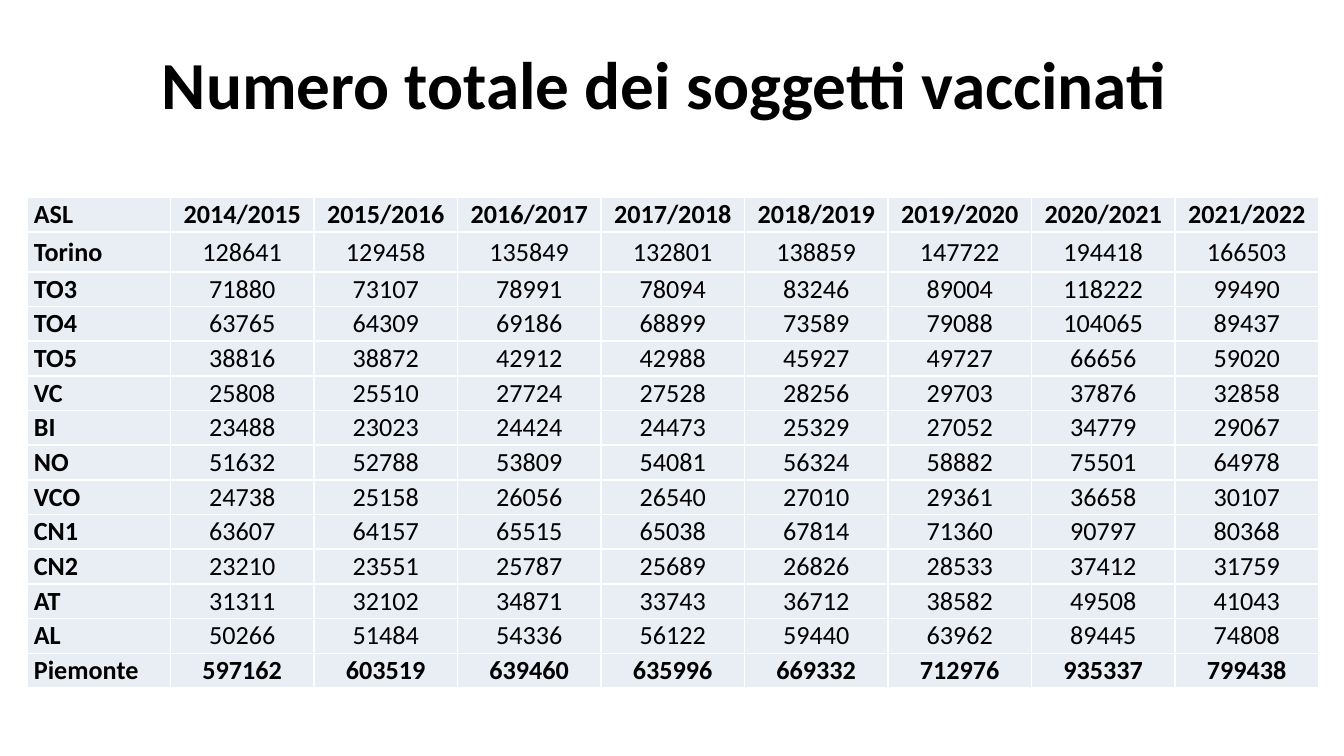
from pptx import Presentation
from pptx.dml.color import RGBColor
from pptx.enum.text import MSO_ANCHOR, PP_ALIGN
from pptx.util import Cm, Pt

BLACK = RGBColor(0x00, 0x00, 0x00)
PALE = RGBColor(0xE9, 0xED, 0xF4)
WHITE = RGBColor(0xFF, 0xFF, 0xFF)

ROWS = """
ASL 2014/2015 2015/2016 2016/2017 2017/2018 2018/2019 2019/2020 2020/2021 2021/2022
Torino 128641 129458 135849 132801 138859 147722 194418 166503
TO3 71880 73107 78991 78094 83246 89004 118222 99490
TO4 63765 64309 69186 68899 73589 79088 104065 89437
TO5 38816 38872 42912 42988 45927 49727 66656 59020
VC 25808 25510 27724 27528 28256 29703 37876 32858
BI 23488 23023 24424 24473 25329 27052 34779 29067
NO 51632 52788 53809 54081 56324 58882 75501 64978
VCO 24738 25158 26056 26540 27010 29361 36658 30107
CN1 63607 64157 65515 65038 67814 71360 90797 80368
CN2 23210 23551 25787 25689 26826 28533 37412 31759
AT 31311 32102 34871 33743 36712 38582 49508 41043
AL 50266 51484 54336 56122 59440 63962 89445 74808
Piemonte 597162 603519 639460 635996 669332 712976 935337 799438
"""


def style(par, size, bold, align):
    par.alignment = align
    font = par.runs[0].font
    font.name = "Calibri"
    font.size = Pt(size)
    font.bold = bold
    font.color.rgb = BLACK


deck = Presentation()
deck.slide_width = Cm(25.4)
deck.slide_height = Cm(14.28)
slide = deck.slides.add_slide(deck.slide_layouts[6])
slide.background.fill.solid()
slide.background.fill.fore_color.rgb = WHITE

title = slide.shapes.add_textbox(Cm(1.27), Cm(0.58), Cm(22.86), Cm(1.98))
frame = title.text_frame
frame.word_wrap = True
frame.vertical_anchor = MSO_ANCHOR.MIDDLE
frame.text = "Numero totale dei soggetti vaccinati "
style(frame.paragraphs[0], 36, True, PP_ALIGN.CENTER)

data = [line.split() for line in ROWS.strip().splitlines()]
last = len(data) - 1
wide, high, tall = Cm(24.41), Cm(9.27), Cm(0.75)
table = slide.shapes.add_table(
    len(data), len(data[0]), Cm(0.51), Cm(3.73), wide, high
).table
table.first_row = False
table.horz_banding = False

for col in table.columns:
    col.width = wide // len(data[0])
for row in table.rows:
    row.height = (high - tall) // last
table.rows[1].height = tall

for r, line in enumerate(data):
    for c, text in enumerate(line):
        cell = table.cell(r, c)
        cell.fill.solid()
        cell.fill.fore_color.rgb = PALE
        cell.vertical_anchor = MSO_ANCHOR.MIDDLE
        cell.margin_left = cell.margin_right = Cm(0.13)
        cell.margin_top = cell.margin_bottom = Cm(0)
        cell.text_frame.text = text
        bold = c == 0 or r in (0, last)
        align = PP_ALIGN.CENTER if c else PP_ALIGN.LEFT
        style(cell.text_frame.paragraphs[0], 14, bold, align)

deck.save("out.pptx")
